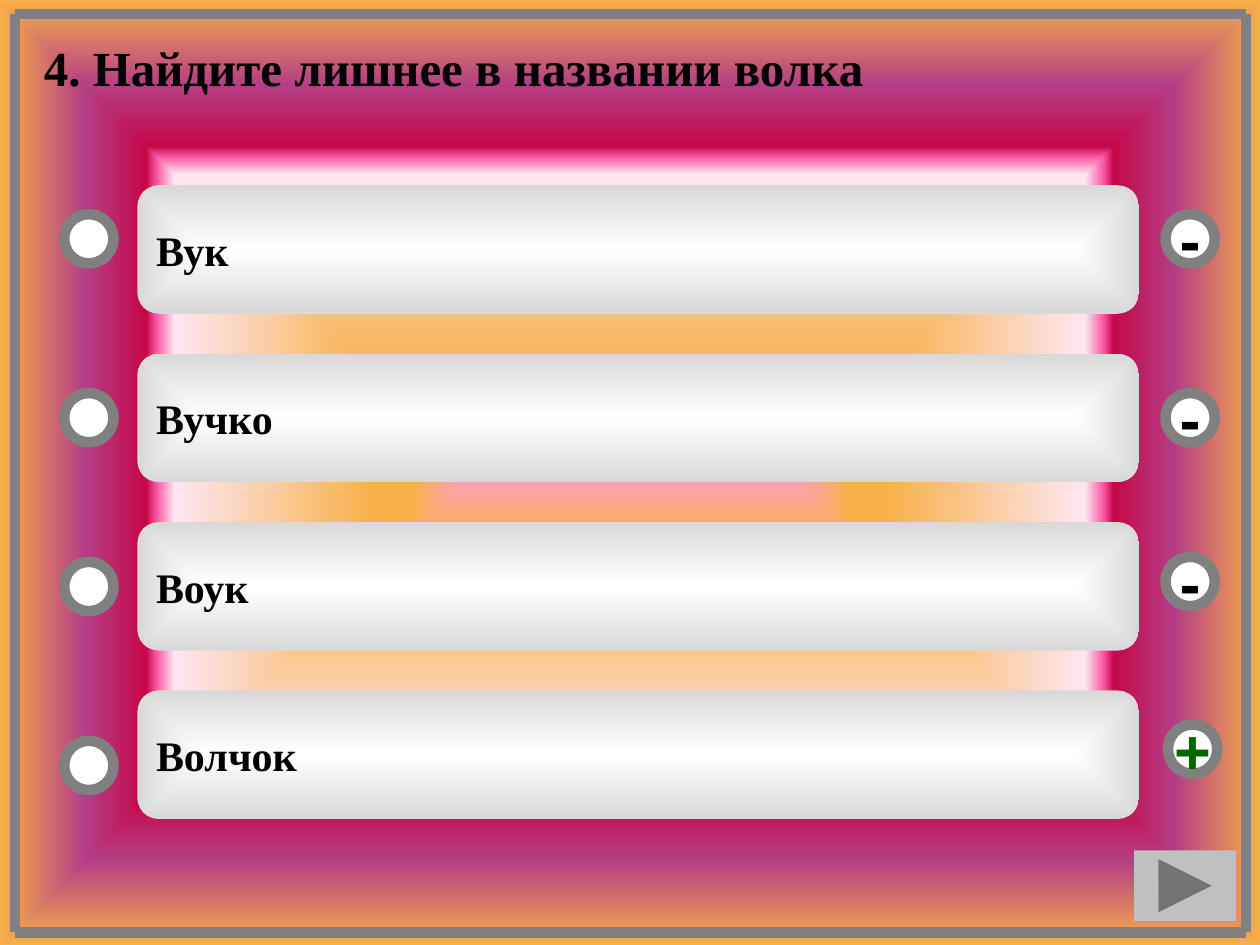
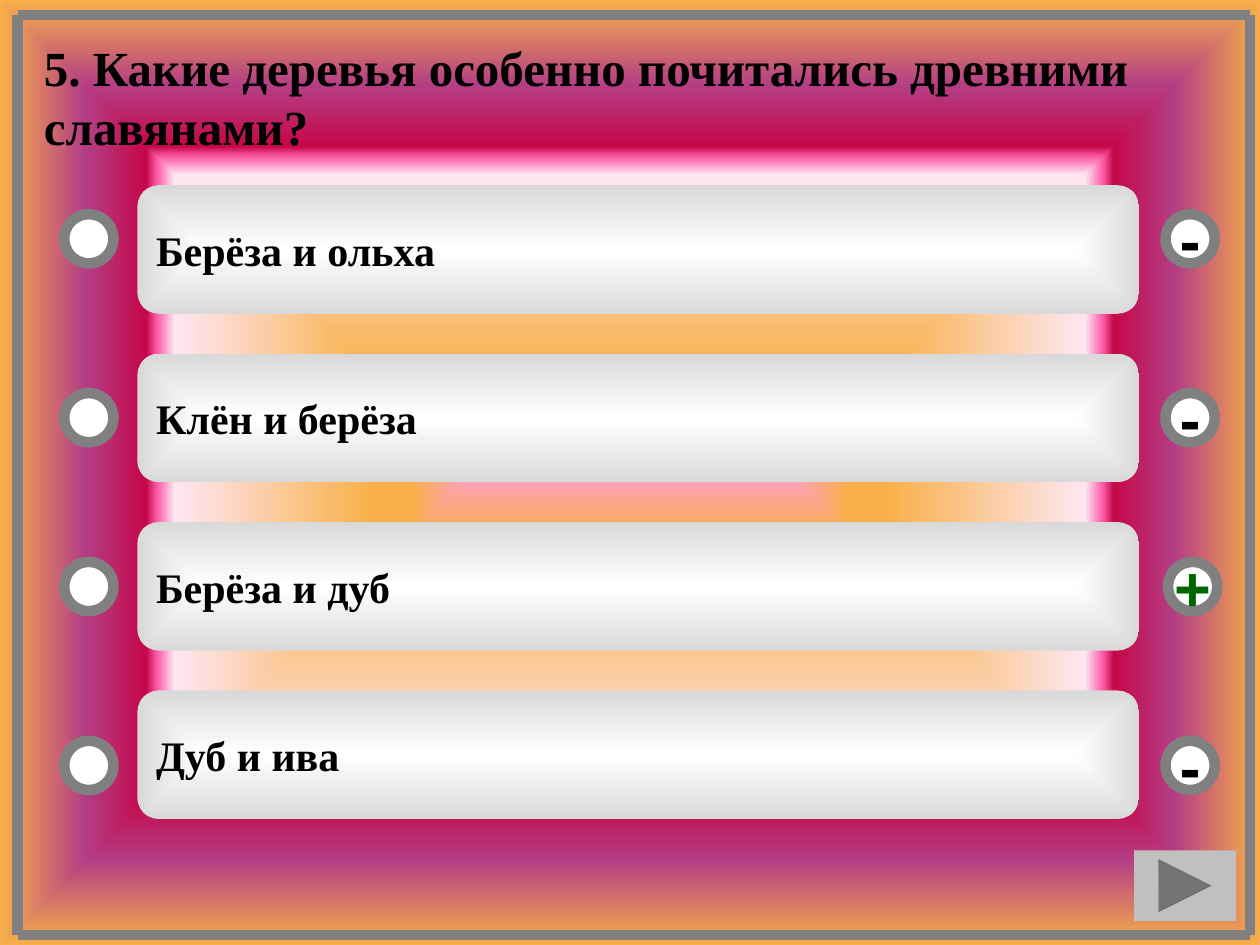
from lxml.etree import SubElement
from pptx import Presentation
from pptx.dml.color import RGBColor
from pptx.enum.shapes import MSO_CONNECTOR, MSO_SHAPE
from pptx.enum.text import MSO_ANCHOR as ANCHOR, MSO_AUTO_SIZE as AUTO, PP_ALIGN as ALIGN
from pptx.oxml.ns import qn
from pptx.util import Inches, Pt

COLORS = {
    "frame": "808080",
    "white": "FFFFFF",
    "text": "000000",
    "right": "006600",
    "button": "C0C0C0",
}
BACKGROUND = [(0, "FC9FCB"), (13, "F8B049"), (21, "F8B049"), (63, "FEE7F2"),
              (67, "F952A0"), (69, "C50849"), (82, "B43E85"), (100, "F8B049")]
ANSWER_FILL = [(0, "FFFFFF"), (100, "D9D9D9")]
SERIF, SANS = "Times New Roman", "Arial"

ANSWER_TOP, ANSWER_STEP = 1.47, 4.01 / 3
CIRCLE_TOPS = [1.7, 3.12, 4.46, 5.88]
CIRCLE_SIZE = 0.39

# Question, answers, marks, tops of the marks, frame (left, top, right, bottom)
QUESTIONS = [
    ("4. Найдите лишнее в названии волка",
     ["Вук", "Вучко", "Воук", "Волчок"],
     "---+", [1.7, 3.12, 4.42, 5.75], (0.12, 0.11, 9.89, 7.4)),
    ("5. Какие деревья особенно почитались древними славянами?",
     ["Берёза и ольха", "Клён и берёза", "Берёза и дуб", "Дуб и ива"],
     "--+-", CIRCLE_TOPS, (0.14, 0.12, 9.92, 7.42)),
]


def rgb(name):
    return RGBColor.from_string(COLORS[name])


def set_path_gradient(fill, element, stops):
    """Fill with a gradient that runs from the centre to the edges."""
    fill.gradient()
    grad = element.find(".//" + qn("a:gradFill"))
    for child in list(grad):
        grad.remove(child)
    gs_list = SubElement(grad, qn("a:gsLst"))
    for pos, color in stops:
        gs = SubElement(gs_list, qn("a:gs"), pos=str(pos * 1000))
        SubElement(gs, qn("a:srgbClr"), val=color)
    path = SubElement(grad, qn("a:path"), path="shape")
    SubElement(path, qn("a:fillToRect"), l="50000", t="50000", r="50000", b="50000")


def write(sp, text, size, font, color="text", align=ALIGN.LEFT, wrap=True):
    tf = sp.text_frame
    tf.word_wrap = wrap
    tf.text = text
    p = tf.paragraphs[0]
    p.alignment = align
    r = p.runs[0]
    r.font.size, r.font.name, r.font.bold = Pt(size), font, True
    r.font.color.rgb = rgb(color)
    return tf


def add_shape(slide, kind, left, top, width, height, fill=None):
    sp = slide.shapes.add_shape(kind, Inches(left), Inches(top), Inches(width), Inches(height))
    sp.shadow.inherit = False
    sp.line.fill.background()
    if fill:
        sp.fill.solid()
        sp.fill.fore_color.rgb = rgb(fill)
    return sp


def add_frame(slide, left, top, right, bottom):
    sides = [(left, top, right, top), (left, top, left, bottom),
             (left, bottom, right, bottom), (right, top, right, bottom)]
    for side in sides:
        line = slide.shapes.add_connector(MSO_CONNECTOR.STRAIGHT, *map(Inches, side))
        line.line.color.rgb = rgb("frame")
        line.line.width = Pt(6)
        SubElement(line.element.spPr, qn("a:effectLst"))


def add_title(slide, text):
    box = slide.shapes.add_textbox(Inches(0.25), Inches(0.25), Inches(9.27), Inches(0.57))
    write(box, text, 28, SERIF).auto_size = AUTO.SHAPE_TO_FIT_TEXT


def add_answer(slide, text, top):
    sp = add_shape(slide, MSO_SHAPE.ROUNDED_RECTANGLE, 1.09, top, 7.95, 1.02)
    set_path_gradient(sp.fill, sp.element, ANSWER_FILL)
    write(sp, text, 24, SERIF).vertical_anchor = ANCHOR.MIDDLE


def add_circle(slide, left, top):
    sp = add_shape(slide, MSO_SHAPE.OVAL, left, top, CIRCLE_SIZE, CIRCLE_SIZE, "white")
    sp.line.color.rgb = rgb("frame")
    sp.line.width = Pt(6)
    return sp


def add_mark(slide, mark, top):
    is_right = mark == "+"
    sp = add_circle(slide, 9.27 if is_right else 9.25, top)
    tf = write(sp, mark, 36, SANS, "right" if is_right else "text", ALIGN.CENTER, wrap=False)
    tf.vertical_anchor = ANCHOR.MIDDLE


def add_question(prs, title, answers, marks, mark_tops, frame):
    slide = prs.slides.add_slide(prs.slide_layouts[6])
    set_path_gradient(slide.background.fill, slide.element, BACKGROUND)
    add_frame(slide, *frame)
    add_title(slide, title)

    # Answer rows
    for i, answer in enumerate(answers):
        add_answer(slide, answer, ANSWER_TOP + i * ANSWER_STEP)
        add_circle(slide, 0.51, CIRCLE_TOPS[i])
        add_mark(slide, marks[i], mark_tops[i])

    # Button to the next question
    add_shape(slide, MSO_SHAPE.ACTION_BUTTON_FORWARD_OR_NEXT, 9, 6.75, 0.81, 0.56, "button")


def main():
    prs = Presentation()
    prs.slide_width, prs.slide_height = Inches(10), Inches(7.5)
    for question in QUESTIONS:
        add_question(prs, *question)
    prs.save("out.pptx")


if __name__ == "__main__":
    main()
